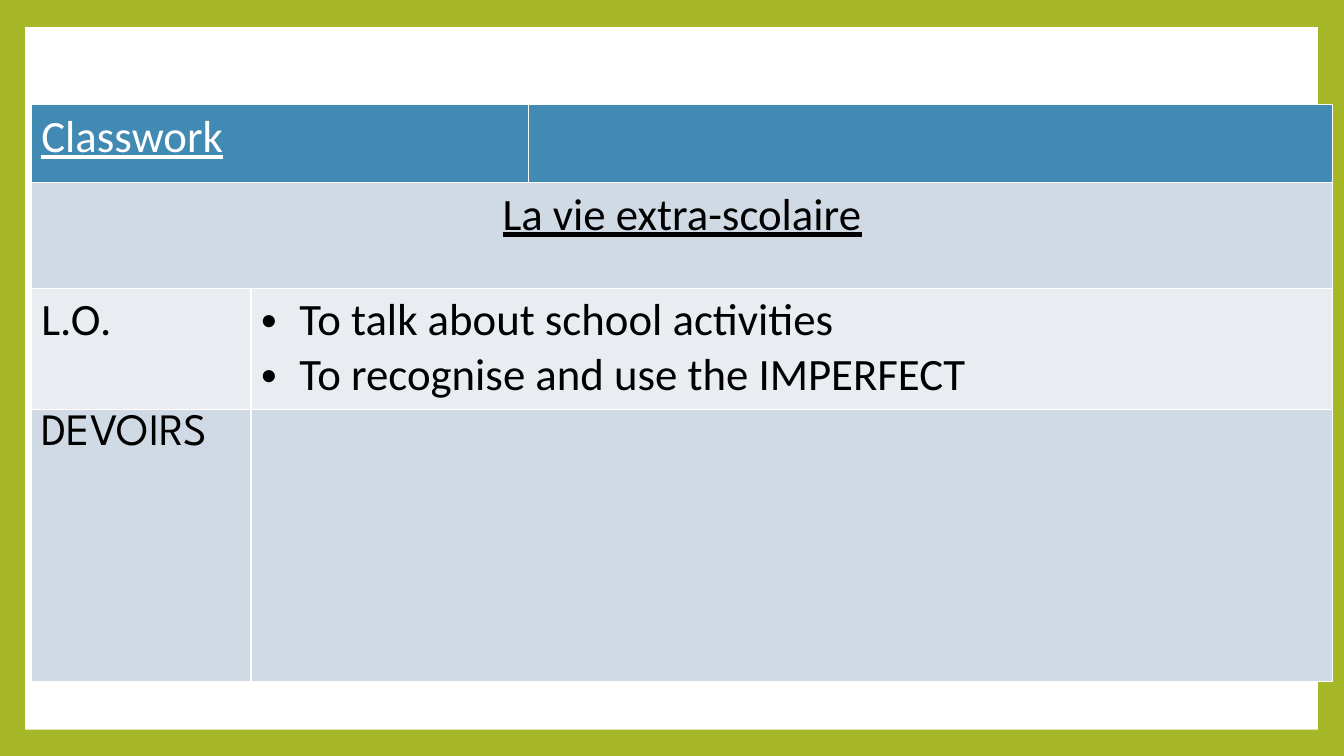
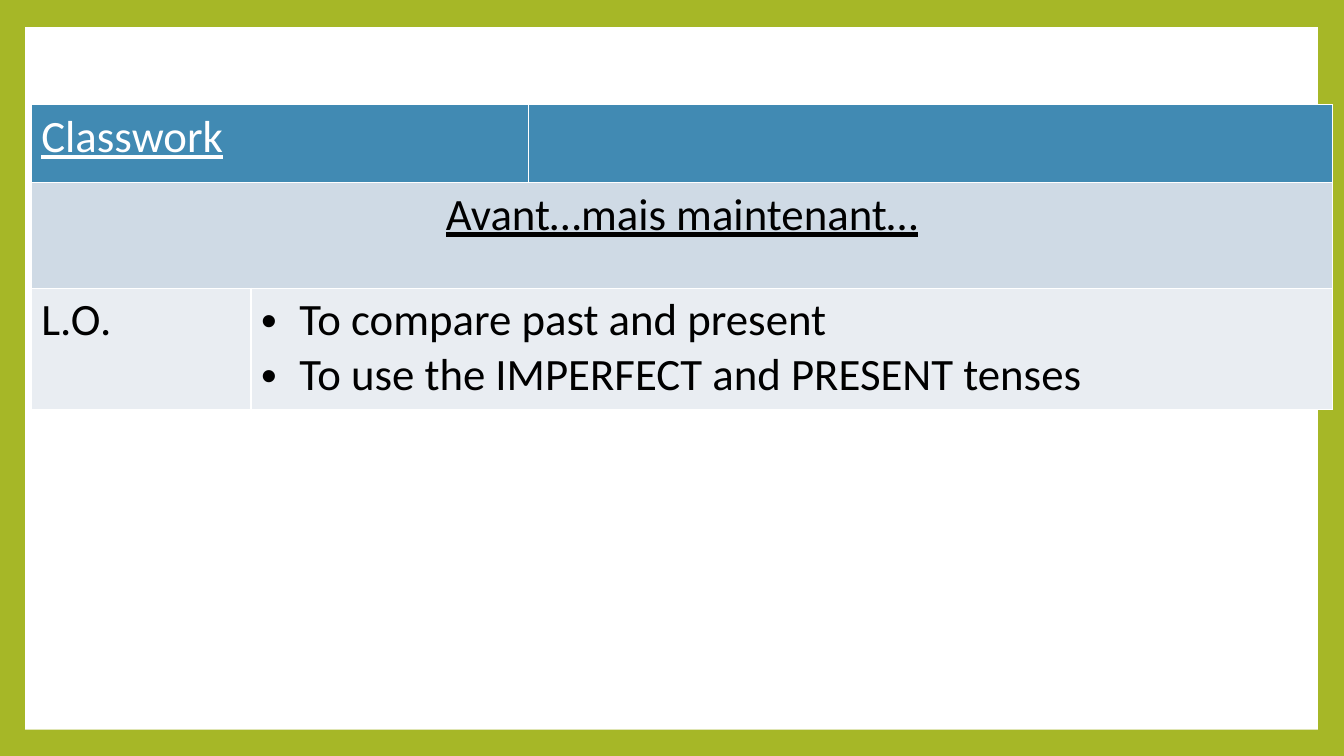
from lxml import etree
from pptx import Presentation
from pptx.dml.color import RGBColor
from pptx.enum import shapes, text
from pptx.oxml import ns
from pptx.util import Inches, Pt

GREEN = RGBColor(0xA6, 0xB7, 0x27)
WHITE = RGBColor(0xFF, 0xFF, 0xFF)
BLACK = RGBColor(0, 0, 0)
BLUE = RGBColor(0x41, 0x8A, 0xB3)
BAND_DARK = RGBColor(0xCF, 0xDA, 0xE5)
BAND_LIGHT = RGBColor(0xE9, 0xED, 0xF2)

PANEL = (0.25, 0.27, 12.82, 6.97)
TABLE_LEFT, TABLE_TOP = 0.31, 1.04
COLUMN_WIDTHS = (2.18, 2.75, 7.98)
BULLET_INDENT = Inches(0.38)

BASE_FORMAT = {"name": "Calibri", "size": Pt(32), "bold": False, "underline": False}
HEADING = {"underline": True}

# Row kinds: height, fill, text colour, merged column range
ROW_STYLES = {
    "header": (0.77, BLUE, WHITE, (0, 1)),
    "title": (1.05, BAND_DARK, BLACK, (0, 2)),
    "objectives": (1.2, BAND_LIGHT, BLACK, (1, 2)),
    "homework": (2.7, BAND_DARK, BLACK, (1, 2)),
}

LESSONS = [
    {
        "title": "La vie extra-scolaire",
        "objectives": ["To talk about school activities",
                       "To recognise and use the IMPERFECT"],
        "homework": "DEVOIRS",
    },
    {
        "title": "Avant…mais maintenant…",
        "objectives": ["To compare past and present",
                       "To use the IMPERFECT and PRESENT tenses"],
    },
]


def add_panel(slide):
    panel = slide.shapes.add_shape(shapes.MSO_SHAPE.RECTANGLE, *map(Inches, PANEL))
    panel.shadow.inherit = False
    panel.fill.solid()
    panel.fill.fore_color.rgb = WHITE
    panel.line.fill.background()


def style_cell(cell, fill_color):
    """Give the cell white borders and a solid fill; borders must come first."""
    properties = cell._tc.get_or_add_tcPr()
    for side in "LRTB":
        border = etree.SubElement(properties, ns.qn(f"a:ln{side}"), w=str(Pt(1)))
        solid = etree.SubElement(border, ns.qn("a:solidFill"))
        etree.SubElement(solid, ns.qn("a:srgbClr"), val=str(WHITE))
    cell.fill.solid()
    cell.fill.fore_color.rgb = fill_color


def add_bullet(paragraph):
    properties = paragraph._p.get_or_add_pPr()
    properties.set("marL", str(BULLET_INDENT))
    properties.set("indent", str(-BULLET_INDENT))
    etree.SubElement(properties, ns.qn("a:buFont"), typeface="Arial")
    etree.SubElement(properties, ns.qn("a:buChar"), char="•")


def write(cell, lines, color, changes=None, centered=False, bulleted=False):
    frame = cell.text_frame
    for index, line in enumerate(lines):
        paragraph = frame.add_paragraph() if index else frame.paragraphs[0]
        if centered:
            paragraph.alignment = text.PP_ALIGN.CENTER
        if bulleted:
            add_bullet(paragraph)
        run = paragraph.add_run()
        run.text = line
        for name, value in {**BASE_FORMAT, **(changes or {})}.items():
            setattr(run.font, name, value)
        run.font.color.rgb = color


def add_lesson_table(slide, lesson):
    kinds = [kind for kind in ROW_STYLES if kind == "header" or kind in lesson]
    heights = [ROW_STYLES[kind][0] for kind in kinds]
    table = slide.shapes.add_table(
        len(kinds), len(COLUMN_WIDTHS), Inches(TABLE_LEFT), Inches(TABLE_TOP),
        Inches(sum(COLUMN_WIDTHS)), Inches(sum(heights))).table
    for column, width in zip(table.columns, COLUMN_WIDTHS):
        column.width = Inches(width)

    for index, kind in enumerate(kinds):
        height, fill_color, color, (first, last) = ROW_STYLES[kind]
        table.rows[index].height = Inches(height)
        for cell in table.rows[index].cells:
            style_cell(cell, fill_color)
        table.cell(index, first).merge(table.cell(index, last))
        label, detail = table.cell(index, 0), table.cell(index, 1)
        if kind == "header":
            write(label, ["Classwork"], color, HEADING)
        elif kind == "title":
            write(label, [lesson["title"]], color, HEADING, centered=True)
        elif kind == "objectives":
            write(label, ["L.O."], color)
            write(detail, lesson["objectives"], color, bulleted=True)
        else:
            write(label, [lesson["homework"]], color, {"name": "League Spartan"})


def main():
    presentation = Presentation()
    presentation.slide_width = Inches(13.33)
    presentation.slide_height = Inches(7.5)
    background = presentation.slide_master.background.fill
    background.solid()
    background.fore_color.rgb = GREEN
    for lesson in LESSONS:
        slide = presentation.slides.add_slide(presentation.slide_layouts[6])
        add_panel(slide)
        add_lesson_table(slide, lesson)
    presentation.save("out.pptx")


if __name__ == "__main__":
    main()
